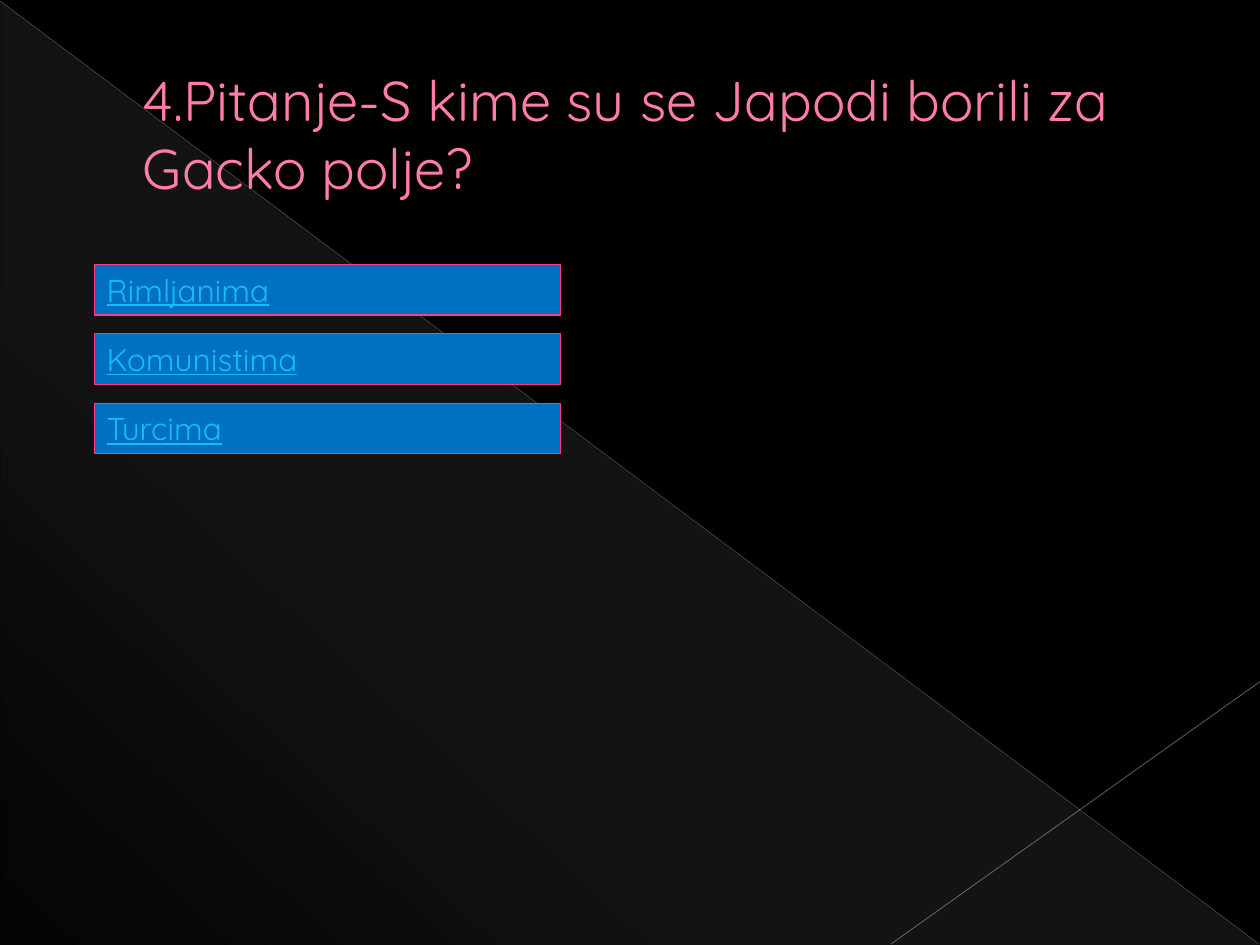
import copy

import pptx
import pptx.dml.color
import pptx.enum.shapes
import pptx.enum.text
import pptx.oxml.ns
import pptx.util
from lxml import etree

Cm = pptx.util.Cm
Pt = pptx.util.Pt
qn = pptx.oxml.ns.qn
Shapes = pptx.enum.shapes.MSO_SHAPE


def colour(hex_value):
    return pptx.dml.color.RGBColor.from_string(hex_value)


def set_alpha(colour_element, percent):
    etree.SubElement(colour_element, qn("a:alpha")).set("val", str(percent * 1000))


class QuizSlide:
    font = "Quicksand"
    title_colour = "FF7DA7"
    title_outline = "B12761"
    answer_fill = "0070C0"
    answer_line = "FF388C"
    answer_text = "17BBFD"

    def __init__(self, deck):
        self.page = deck.slides.add_slide(deck.slide_layouts[6])
        background = self.page.background.fill
        background.solid()
        background.fore_color.rgb = colour("000000")

    def add_span(self, para, text, size, hex_value):
        span = para.add_run()
        span.text = text
        span.font.name = self.font
        span.font.size = Pt(size)
        span.font.color.rgb = colour(hex_value)
        return span

    def triangle(self, left, top, width, height, hex_value, stops, angle):
        shape = self.page.shapes.add_shape(
            Shapes.RIGHT_TRIANGLE, Cm(left), Cm(top), Cm(width), Cm(height))
        shape.shadow.inherit = False
        shape.line.fill.background()
        shape.fill.gradient()
        shape.fill.gradient_angle = angle
        stop_list = shape._element.spPr.find(".//" + qn("a:gsLst"))
        stop_list.insert(1, copy.deepcopy(stop_list[0]))
        for stop, element, (position, alpha) in zip(
                shape.fill.gradient_stops, stop_list, stops):
            stop.position = position
            stop.color.rgb = colour(hex_value)
            set_alpha(element[0], alpha)

    def line(self, start, end, hex_value, width, alpha):
        line = self.page.shapes.add_connector(
            pptx.enum.shapes.MSO_CONNECTOR.STRAIGHT,
            *(Cm(length) for length in start + end))
        line.line.color.rgb = colour(hex_value)
        line.line.width = Pt(width)
        properties = line._element.spPr
        set_alpha(properties.find(".//" + qn("a:srgbClr")), alpha)
        etree.SubElement(properties, qn("a:effectLst"))

    def title(self, text, left, top, width, height, indent):
        box = self.page.shapes.add_textbox(Cm(left), Cm(top), Cm(width), Cm(height))
        frame = box.text_frame
        frame.word_wrap = True
        frame.vertical_anchor = pptx.enum.text.MSO_ANCHOR.MIDDLE
        para = frame.paragraphs[0]
        para._p.get_or_add_pPr().set("marL", str(Cm(indent)))
        span = self.add_span(para, text, 32, self.title_colour)
        outline = etree.Element(qn("a:ln"), w=str(Pt(0.5)))
        fill = etree.SubElement(outline, qn("a:solidFill"))
        etree.SubElement(fill, qn("a:srgbClr")).set("val", self.title_outline)
        span.font._element.insert(0, outline)

    def answer(self, text, left, top, width, height):
        box = self.page.shapes.add_shape(
            Shapes.RECTANGLE, Cm(left), Cm(top), Cm(width), Cm(height))
        box.shadow.inherit = False
        box.fill.solid()
        box.fill.fore_color.rgb = colour(self.answer_fill)
        box.line.color.rgb = colour(self.answer_line)
        box.line.width = Pt(0.75)
        frame = box.text_frame
        frame.word_wrap = True
        frame.auto_size = pptx.enum.text.MSO_AUTO_SIZE.SHAPE_TO_FIT_TEXT
        frame.vertical_anchor = pptx.enum.text.MSO_ANCHOR.TOP
        para = frame.paragraphs[0]
        para.alignment = pptx.enum.text.PP_ALIGN.LEFT
        span = self.add_span(para, text, 18, self.answer_text)
        span.font.underline = True


def main():
    deck = pptx.Presentation()
    deck.slide_width = Cm(25.4)
    deck.slide_height = Cm(19.05)

    quiz = QuizSlide(deck)
    quiz.triangle(0.02, 0.04, 25.36, 19, "D2D2D2", [(0, 10), (0.7, 8), (1, 1)], 227)
    quiz.line((0, 0.02), (25.38, 19.03), "BFBFBF", 0.39, 35)
    quiz.line((25.4, 13.74), (17.96, 19.03), "C6C6C6", 0.47, 45)
    quiz.title("4.Pitanje-S kime su se Japodi borili za Gacko polje?",
               1.27, 0.74, 22.86, 3.89, 1.35)
    for row, text in enumerate(["Rimljanima", "Komunistima", "Turcima"]):
        quiz.answer(text, 1.9, 5.33 + 1.4 * row, 9.4, 1.02)

    deck.save("out.pptx")


if __name__ == "__main__":
    main()
